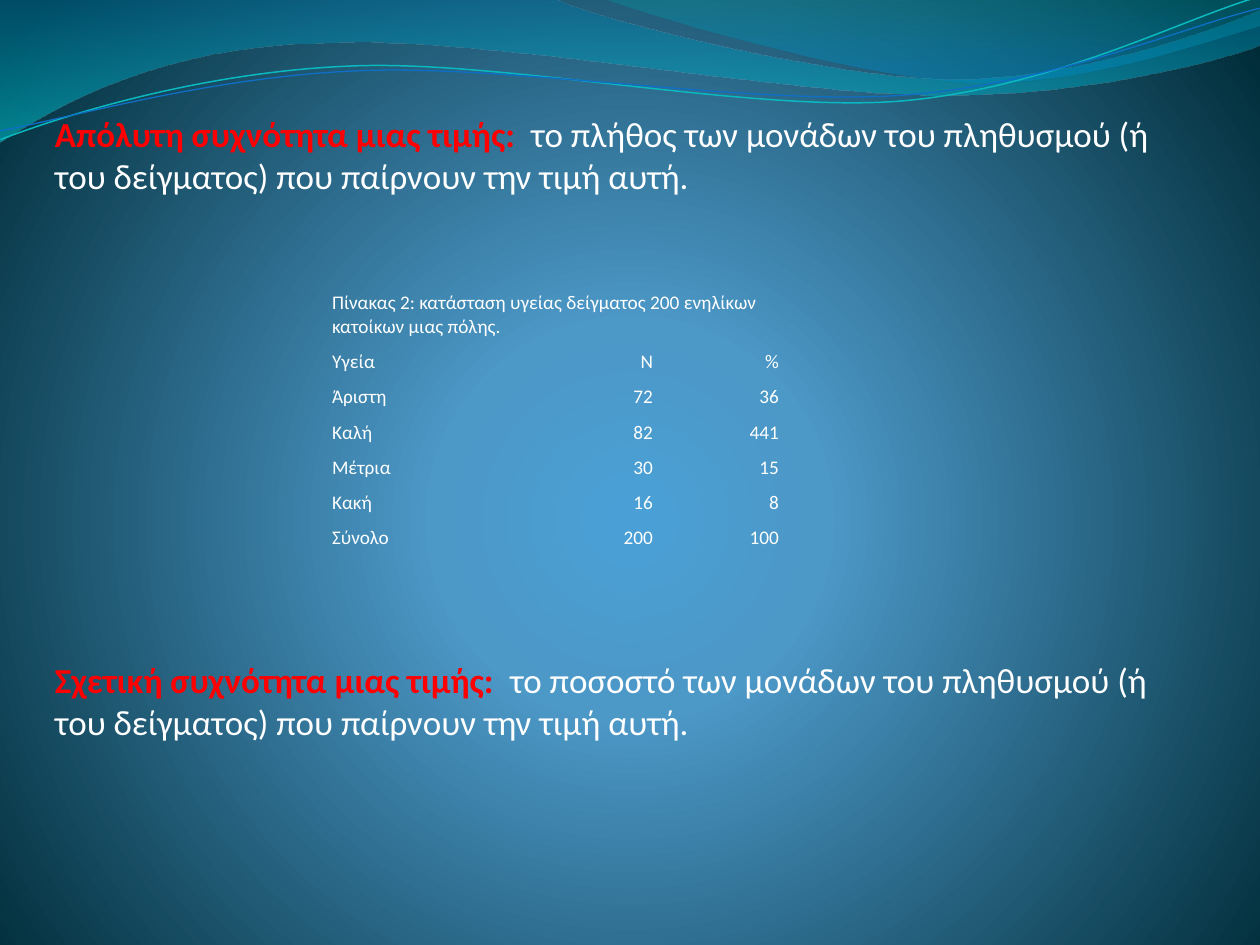
import pptx
import pptx.dml.color
import pptx.enum.text
import pptx.oxml
import pptx.oxml.ns
import pptx.util

COLORS = {
    "text": "FFFFFF", "term": "FF0000",
    "glow": "4AA0D6", "mid": "4C98C7", "edge": "002C38",
    "wave_blue": "0074A1", "wave_teal": "00C6CF",
    "crest_green": "00A1A9", "crest_blue": "008BBF",
    "line_teal": "0AB8BF", "line_blue": "0F6FC6",
}
FONT = "Calibri"
SCALE = 914400 / 126
NO_GRID_STYLE = "{2D5ABB26-0587-4C30-8999-92F81FD0307C}"
ALIGN = pptx.enum.text.PP_ALIGN
BOTTOM = pptx.enum.text.MSO_ANCHOR.BOTTOM
DOWNWARD = '<a:lin ang="5400000" scaled="0"/>'
RADIAL = ('<a:path path="circle"><a:fillToRect l="10000" t="110000" '
          'r="10000" b="100000"/></a:path>')


def emu(px):
    return pptx.util.Emu(round(px * SCALE))


def rgb(name):
    return pptx.dml.color.RGBColor.from_string(COLORS[name])


def write(paragraph, text, size=20, color="text", bold=False, align=ALIGN.LEFT):
    paragraph.alignment = align
    run = paragraph.add_run()
    run.text = text
    run.font.name = FONT
    run.font.size = pptx.util.Pt(size)
    run.font.bold = bold
    run.font.color.rgb = rgb(color)


def set_gradient(fill, owner, stops, direction):
    fill.gradient()
    old = owner.find(".//" + pptx.oxml.ns.qn("a:gradFill"))
    marks = "".join(
        f'<a:gs pos="{position * 1000}"><a:srgbClr val="{COLORS[name]}">'
        f'<a:alpha val="{alpha * 1000}"/></a:srgbClr></a:gs>'
        for position, name, alpha in stops)
    new = pptx.oxml.parse_xml(
        f'<a:gradFill {pptx.oxml.ns.nsdecls("a")} rotWithShape="1">'
        f"<a:gsLst>{marks}</a:gsLst>{direction}</a:gradFill>")
    old.getparent().replace(old, new)


def bend(outline, segments):
    straight = outline._element.findall(".//" + pptx.oxml.ns.qn("a:lnTo"))
    for line, segment in zip(straight, segments):
        if len(segment) == 6:
            points = "".join(
                f'<a:pt x="{emu(x) - outline.left}" y="{emu(y) - outline.top}"/>'
                for x, y in zip(segment[::2], segment[1::2]))
            line.getparent().replace(line, pptx.oxml.parse_xml(
                f'<a:cubicBezTo {pptx.oxml.ns.nsdecls("a")}>{points}</a:cubicBezTo>'))


class Deck:
    def __init__(self, width, height):
        self.presentation = pptx.Presentation()
        self.presentation.slide_width = emu(width)
        self.presentation.slide_height = emu(height)
        self.slide = self.presentation.slides.add_slide(
            self.presentation.slide_layouts[6])

    def background(self, stops):
        set_gradient(self.slide.background.fill, self.slide._element, stops, RADIAL)

    def outline(self, start, segments, close):
        builder = self.slide.shapes.build_freeform(*map(emu, start), scale=1.0)
        builder.add_line_segments(
            [tuple(map(emu, segment[-2:])) for segment in segments], close=close)
        outline = builder.convert_to_shape()
        outline.shadow.inherit = False
        bend(outline, segments)
        return outline

    def wave(self, start, segments, stops):
        wave = self.outline(start, segments, True)
        set_gradient(wave.fill, wave._element, stops, DOWNWARD)
        wave.line.fill.background()

    def curve(self, start, segments, color, width):
        curve = self.outline(start, segments, False)
        curve.rotation = 357.3
        curve.fill.background()
        curve.line.color.rgb = rgb(color)
        curve.line.width = pptx.util.Pt(width)

    def definition(self, top, term, meaning):
        box = self.slide.shapes.add_textbox(emu(55), emu(top), emu(1111), emu(203))
        frame = box.text_frame
        frame.word_wrap = True
        frame.vertical_anchor = BOTTOM
        frame.margin_left = frame.margin_top = 0
        frame.margin_right = emu(3)
        frame.margin_bottom = emu(42)
        write(frame.paragraphs[0], term + "  ", color="term", bold=True)
        write(frame.paragraphs[0], meaning)

    def table(self, left, top, widths, heights, caption, rows):
        table = self.slide.shapes.add_table(
            len(heights), len(widths), emu(left), emu(top),
            emu(sum(widths)), emu(sum(heights))).table
        table.first_row = table.horz_banding = False
        style = table._tbl.tblPr.find(pptx.oxml.ns.qn("a:tableStyleId"))
        style.text = NO_GRID_STYLE
        for column, width in zip(table.columns, widths):
            column.width = emu(width)
        for row, height in zip(table.rows, heights):
            row.height = emu(height)
        table.cell(0, 0).merge(table.cell(0, len(widths) - 1))
        for r, values in enumerate([(caption,)] + rows):
            for c, value in enumerate(values):
                cell = table.cell(r, c)
                cell.fill.background()
                cell.vertical_anchor = BOTTOM
                cell.margin_left = cell.margin_right = 0
                cell.margin_top = cell.margin_bottom = 0
                write(cell.text_frame.paragraphs[0], value, size=11,
                      align=ALIGN.RIGHT if c else ALIGN.LEFT)


def main():
    deck = Deck(1260, 945)
    deck.background([(0, "glow", 100), (25, "mid", 100), (100, "edge", 100)])
    deck.wave(
        (0, 0),
        [(554, -1), (600, 21, 837, 79, 955, 79), (1075, 79, 1207, 33, 1260, 11),
         (1261, 45), (1239, 55, 1096, 96, 940, 95), (784, 95, 481, 35, 324, 43),
         (163, 45, 58, 105, -1, 142)],
        [(0, "wave_blue", 45), (100, "wave_teal", 55)])
    deck.wave(
        (604, -1),
        [(641, 14, 859, 78, 969, 82), (1079, 87, 1211, 40, 1260, 26), (1260, 0)],
        [(0, "crest_green", 30), (80, "crest_blue", 45)])
    deck.curve(
        (-2, 110),
        [(58, 90, 199, 52, 350, 53), (499, 53, 745, 118, 896, 114),
         (1049, 109, 1184, 45, 1260, 27)], "line_teal", 0.85)
    deck.curve(
        (-2, 101),
        [(57, 94, 207, 57, 357, 58), (509, 58, 750, 112, 902, 108),
         (1052, 104, 1188, 52, 1262, 38)], "line_blue", 0.75)
    deck.definition(
        36, "Απόλυτη συχνότητα μιας τιμής:",
        "το πλήθος των μονάδων του πληθυσμού (ή του δείγματος) που παίρνουν την τιμή αυτή.")
    deck.table(
        332, 234, [195, 126, 126], [105, 35, 35, 36, 35, 35, 35],
        "Πίνακας 2: κατάσταση υγείας δείγματος 200 ενηλίκων κατοίκων μιας πόλης.",
        [("Υγεία", "Ν", "%"), ("Άριστη", "72", "36"), ("Καλή", "82", "441"),
         ("Μέτρια", "30", "15"), ("Κακή", "16", "8"), ("Σύνολο", "200", "100")])
    deck.definition(
        582, "Σχετική συχνότητα μιας τιμής:",
        "το ποσοστό των μονάδων του πληθυσμού (ή του δείγματος) που παίρνουν την τιμή αυτή.")
    deck.presentation.save("out.pptx")


if __name__ == "__main__":
    main()
